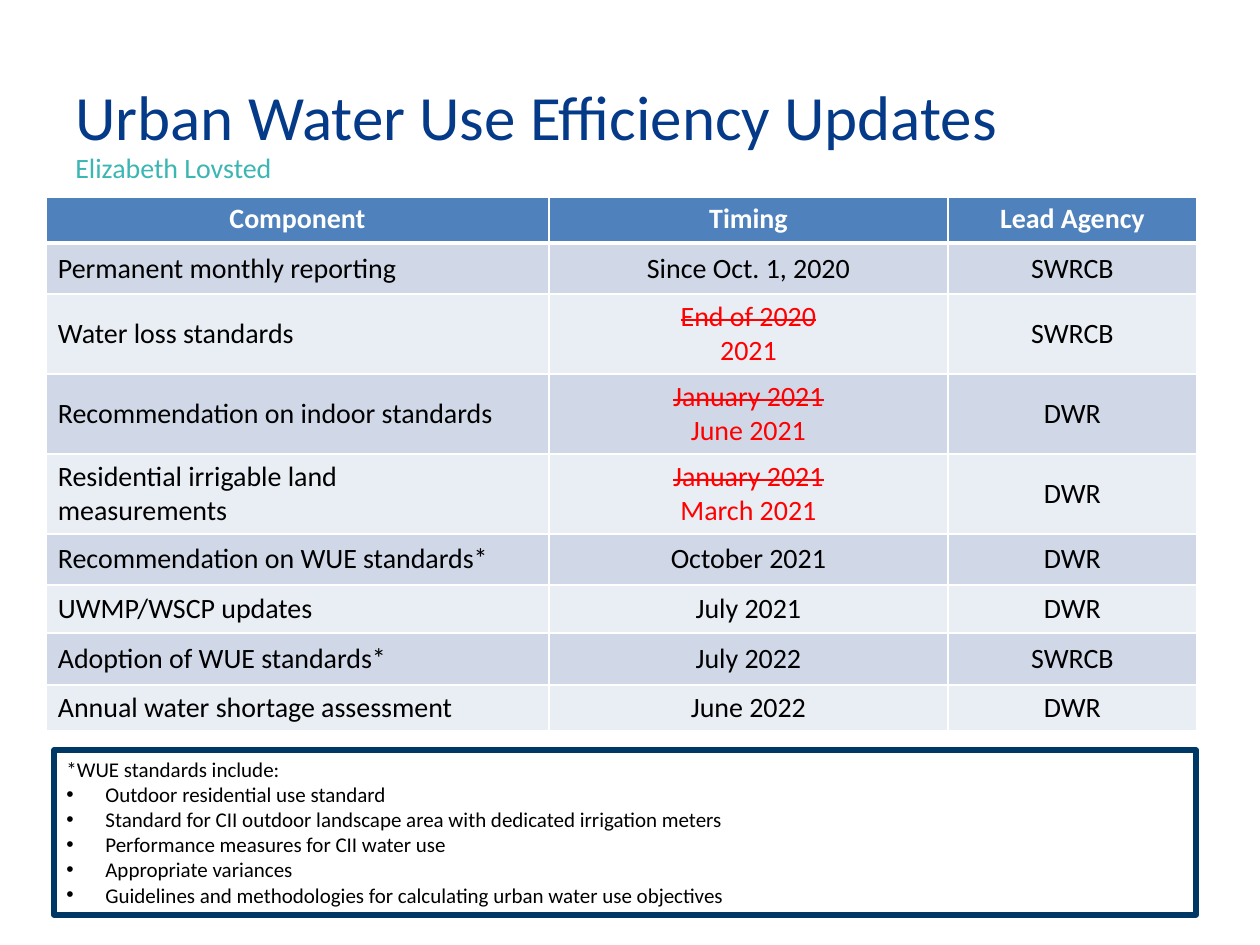
"""Build the urban water use efficiency updates slide."""
import pptx
import pptx.dml.color
import pptx.enum.shapes
import pptx.enum.text
import pptx.oxml
import pptx.oxml.ns
import pptx.util

PX = 914400 // 126
FONT = "Calibri"
COLORS = {
    "title": "053A88", "presenter": "3BB6B3", "header": "4F81BD",
    "odd": "D0D8E8", "even": "E9EDF4", "white": "FFFFFF",
    "black": "000000", "revised": "FF0000", "frame": "003865",
}
ALIGN = pptx.enum.text.PP_ALIGN
ANCHOR = pptx.enum.text.MSO_ANCHOR

TITLE = "Urban Water Use Efficiency Updates"
PRESENTER = "Elizabeth Lovsted"
HEADERS = ["Component", "Timing", "Lead Agency"]
UPDATES = [
    ("Permanent monthly reporting", ["Since Oct. 1, 2020"], "SWRCB"),
    ("Water loss standards", ["End of 2020", "2021"], "SWRCB"),
    ("Recommendation on indoor standards", ["January 2021", "June 2021"], "DWR"),
    ("Residential irrigable land\nmeasurements", ["January 2021", "March 2021"], "DWR"),
    ("Recommendation on WUE standards*", ["October 2021"], "DWR"),
    ("UWMP/WSCP updates", ["July 2021"], "DWR"),
    ("Adoption of WUE standards*", ["July 2022"], "SWRCB"),
    ("Annual water shortage assessment", ["June 2022"], "DWR"),
]
NOTE_HEADING = "*WUE standards include:"
NOTE_ITEMS = [
    "Outdoor residential use standard",
    "Standard for CII outdoor landscape area with dedicated irrigation meters",
    "Performance measures for CII water use",
    "Appropriate variances",
    "Guidelines and methodologies for calculating urban water use objectives",
]
TABLE_LEFT, TABLE_TOP = 46, 197
COLUMN_WIDTHS = [503, 399, 249]
ROW_HEIGHTS = [46, 51, 80, 80, 80, 51, 48, 52, 46]


def px(*values):
    return [pptx.util.Emu(value * PX) for value in values]


def rgb(name):
    return pptx.dml.color.RGBColor.from_string(COLORS[name])


def add_span(para, text, size, color, bold=False, strike=False):
    for index, line in enumerate(text.split("\n")):
        if index:
            para.add_line_break()
        span = para.add_run()
        span.text = line
        span.font.name = FONT
        span.font.size = pptx.util.Pt(size)
        span.font.bold = bold
        span.font.color.rgb = rgb(color)
        if strike:
            span._r.get_or_add_rPr().set("strike", "sngStrike")


def add_label(page, place, text, size, color, anchor):
    box = page.shapes.add_textbox(*px(*place))
    box.text_frame.word_wrap = True
    box.text_frame.vertical_anchor = anchor
    para = box.text_frame.paragraphs[0]
    add_span(para, text, size, color)
    return para


def set_borders(cell, bottom_width):
    properties = cell._tc.get_or_add_tcPr()
    widths = {"lnL": 1, "lnR": 1, "lnT": 1, "lnB": bottom_width}
    for index, (side, width) in enumerate(widths.items()):
        properties.insert(index, pptx.oxml.parse_xml(
            f'<a:{side} {pptx.oxml.ns.nsdecls("a")} w="{width * 12700}">'
            f'<a:solidFill><a:srgbClr val="{COLORS["white"]}"/></a:solidFill></a:{side}>'))


def fill_cell(cell, lines, fill, align, header=False):
    cell.fill.solid()
    cell.fill.fore_color.rgb = rgb(fill)
    cell.margin_left, cell.margin_right, cell.margin_top, cell.margin_bottom = px(12, 12, 5, 5)
    cell.vertical_anchor = ANCHOR.TOP if header else ANCHOR.MIDDLE
    set_borders(cell, 3 if header else 1)
    revised = len(lines) > 1
    color = "white" if header else "revised" if revised else "black"
    for index, line in enumerate(lines):
        para = cell.text_frame.paragraphs[0] if index == 0 else cell.text_frame.add_paragraph()
        para.alignment = align
        add_span(para, line, 16, color, header, revised and index == 0)


def add_updates_table(page):
    place = px(TABLE_LEFT, TABLE_TOP, sum(COLUMN_WIDTHS), sum(ROW_HEIGHTS))
    table = page.shapes.add_table(len(ROW_HEIGHTS), len(COLUMN_WIDTHS), *place).table
    table.horz_banding = False
    for column, width in zip(table.columns, px(*COLUMN_WIDTHS)):
        column.width = width
    for row, height in zip(table.rows, px(*ROW_HEIGHTS)):
        row.height = height
    for column, text in enumerate(HEADERS):
        fill_cell(table.cell(0, column), [text], "header", ALIGN.CENTER, header=True)
    for row, (component, timing, agency) in enumerate(UPDATES, start=1):
        fill = "odd" if row % 2 else "even"
        for column, lines in enumerate([[component], timing, [agency]]):
            align = ALIGN.CENTER if column else ALIGN.LEFT
            fill_cell(table.cell(row, column), lines, fill, align)


def add_note(page):
    box = page.shapes.add_shape(pptx.enum.shapes.MSO_SHAPE.RECTANGLE, *px(54, 750, 1142, 165))
    box.shadow.inherit = False
    box.fill.solid()
    box.fill.fore_color.rgb = rgb("white")
    box.line.color.rgb = rgb("frame")
    box.line.width = pptx.util.Pt(3)
    frame = box.text_frame
    frame.word_wrap = True
    frame.vertical_anchor = ANCHOR.TOP
    heading = frame.paragraphs[0]
    heading.alignment = ALIGN.LEFT
    add_span(heading, NOTE_HEADING, 12, "black")
    indent = 39 * PX
    for item in NOTE_ITEMS:
        para = frame.add_paragraph()
        para.alignment = ALIGN.LEFT
        properties = para._p.get_or_add_pPr()
        properties.set("marL", str(indent))
        properties.set("indent", str(-indent))
        for bullet in ('buFont {} typeface="Arial"', 'buChar {} char="•"'):
            properties.append(pptx.oxml.parse_xml(
                f'<a:{bullet.format(pptx.oxml.ns.nsdecls("a"))}/>'))
        add_span(para, item, 12, "black")


def main():
    deck = pptx.Presentation()
    deck.slide_width, deck.slide_height = px(1260, 945)
    page = deck.slides.add_slide(deck.slide_layouts[6])
    title = add_label(page, (63, 37, 1134, 122), TITLE, 36, "title", ANCHOR.BOTTOM)
    title.line_spacing = pptx.util.Pt(36)
    add_label(page, (63, 144, 1134, 44), PRESENTER, 16, "presenter", ANCHOR.TOP)
    add_updates_table(page)
    add_note(page)
    deck.save("out.pptx")


if __name__ == "__main__":
    main()
